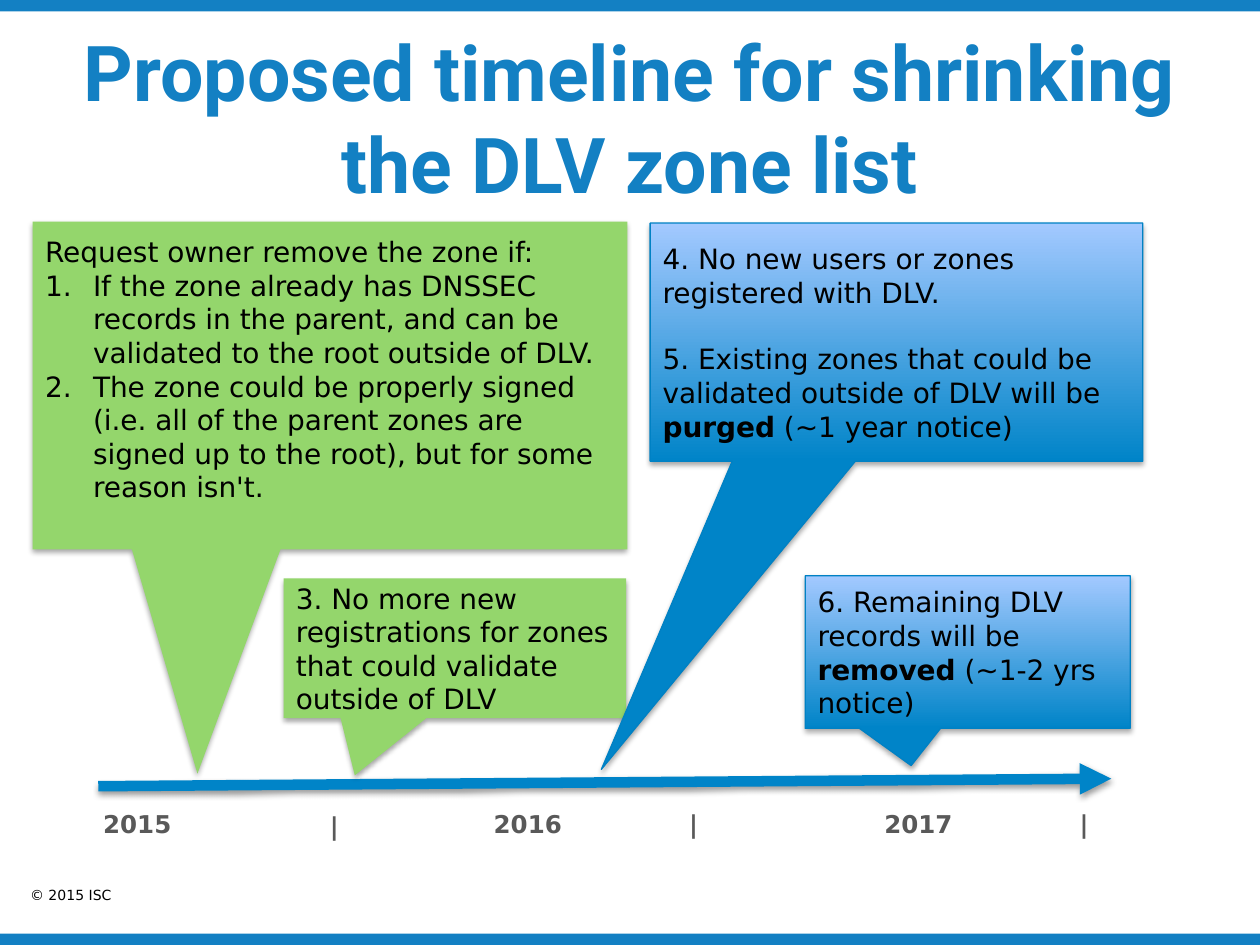
from lxml.etree import SubElement as Sub
from pptx import Presentation
from pptx.dml.color import RGBColor
from pptx.enum.shapes import MSO_CONNECTOR as Link, MSO_SHAPE as Kind
from pptx.enum.text import MSO_ANCHOR as Anchor, PP_ALIGN as Align
from pptx.oxml.ns import qn
from pptx.util import Inches, Pt

hue = RGBColor.from_string


def write(shape, *paras, font="DejaVu Sans", size=16, color="000000", bold=False,
          align=Align.LEFT, anchor=Anchor.TOP, wrap=True, gap=0, list=False):
    frame = shape.text_frame
    frame.word_wrap = wrap
    frame.vertical_anchor = anchor
    for i, words in enumerate(paras):
        para = frame.add_paragraph() if i else frame.paragraphs[0]
        para.alignment = align
        if i and gap:
            para.space_before = Pt(gap)
        if i and list:
            props = para._p.get_or_add_pPr()
            props.set("marL", str(Inches(0.38)))
            props.set("indent", str(-Inches(0.38)))
            Sub(props, qn("a:buFont"), typeface="+mj-lt")
            Sub(props, qn("a:buAutoNum"), type="arabicPeriod")
        for j, part in enumerate(words.split("*")):
            if part:
                run = para.add_run()
                run.text = part
                run.font.name = font
                run.font.size = Pt(size)
                run.font.bold = bold or j % 2 == 1
                run.font.color.rgb = hue(color)


def shade(effects, alpha, dist):
    cast = Sub(effects, qn("a:outerShdw"), blurRad=str(Pt(3.1)), dist=str(Pt(dist)),
               dir="5400000", rotWithShape="0")
    tone = Sub(cast, qn("a:srgbClr"), val="000000")
    Sub(tone, qn("a:alpha"), val=str(alpha * 1000))


deck = Presentation()
deck.slide_width, deck.slide_height = Inches(10), Inches(7.5)
slide = deck.slides.add_slide(deck.slide_layouts[6])
shapes = slide.shapes

for top in (7.41, 0):
    band = shapes.add_shape(Kind.RECTANGLE, 0, Inches(top), Inches(10), Inches(0.09))
    band.shadow.inherit = False
    band.fill.solid()
    band.fill.fore_color.rgb = hue("1380C3")
    band.line.fill.background()

foot = shapes.add_textbox(Inches(0.14), Inches(6.99), Inches(1.86), Inches(0.24))
write(foot, "© 2015 ISC", size=8)

axis = shapes.add_connector(Link.STRAIGHT, Inches(0.78), Inches(6.24), Inches(8.82), Inches(6.18))
axis.line.color.rgb = hue("0084C8")
axis.line.width = Pt(6)
Sub(axis.line._get_or_add_ln(), qn("a:tailEnd"), type="triangle")
shade(Sub(axis._element.spPr, qn("a:effectLst")), 38, 1.6)

marks = [
    ("2015", 0.72, 6.37), ("|", 2.52, 6.39), ("2016", 3.82, 6.37),
    ("|", 5.37, 6.37), ("2017", 6.92, 6.37), ("|", 8.47, 6.37),
]
for mark, left, top in marks:
    width = 0.31 if mark == "|" else 0.76
    label = shapes.add_textbox(Inches(left), Inches(top), Inches(width), Inches(0.34))
    write(label, mark, size=14, color="595959", bold=True, wrap=False)

steps = [
    ("green", (0.26, 1.76, 4.72, 2.6), (-0.223, 1.185), 0.31, dict(list=True), [
        "Request owner remove the zone if:",
        "If the zone already has DNSSEC records in the parent, and can be "
        "validated to the root outside of DLV.",
        "The zone could be properly signed (i.e. all of the parent zones are "
        "signed up to the root), but for some reason isn't.",
    ]),
    ("green", (2.25, 4.59, 2.72, 1.11), (-0.292, 0.909), 0.05, {}, [
        "3. No more new registrations for zones that could validate outside of DLV",
    ]),
    ("blue", (5.16, 1.77, 3.91, 1.89), (-0.599, 1.794), 0.05, dict(gap=19), [
        "4. No new users or zones registered with DLV.",
        "5. Existing zones that could be validated outside of DLV will be "
        "*purged* (~1 year notice)",
    ]),
    ("blue", (6.39, 4.57, 2.58, 1.21), (-0.174, 0.745), 0.05, {}, [
        "6. Remaining DLV records will be *removed* (~1-2 yrs notice)",
    ]),
]
for tint, box, tip, inset, form, words in steps:
    call = shapes.add_shape(Kind.RECTANGULAR_CALLOUT, *map(Inches, box))
    call.adjustments[0], call.adjustments[1] = tip
    if tint == "green":
        call.fill.solid()
        call.fill.fore_color.rgb = hue("94D66C")
        call.line.fill.background()
    else:
        call.fill.gradient()
        call.fill.gradient_angle = 90
        for stop, color in zip(call.fill.gradient_stops, ("0084C8", "A3C9FF")):
            stop.color.rgb = hue(color)
        call.line.color.rgb = hue("0081C4")
        call.line.width = Pt(0.75)
    call.shadow.inherit = False
    shade(call._element.spPr.find(qn("a:effectLst")), 35, 1.8)
    call.text_frame.margin_bottom = Inches(inset)
    write(call, *words, anchor=Anchor.MIDDLE, **form)

title = shapes.add_textbox(Inches(0.5), Inches(0.3), Inches(9), Inches(1.25))
write(title, "Proposed timeline for shrinking the DLV zone list", font="Roboto", size=44,
      color="1380C3", bold=True, align=Align.CENTER, anchor=Anchor.MIDDLE)

deck.save("out.pptx")
